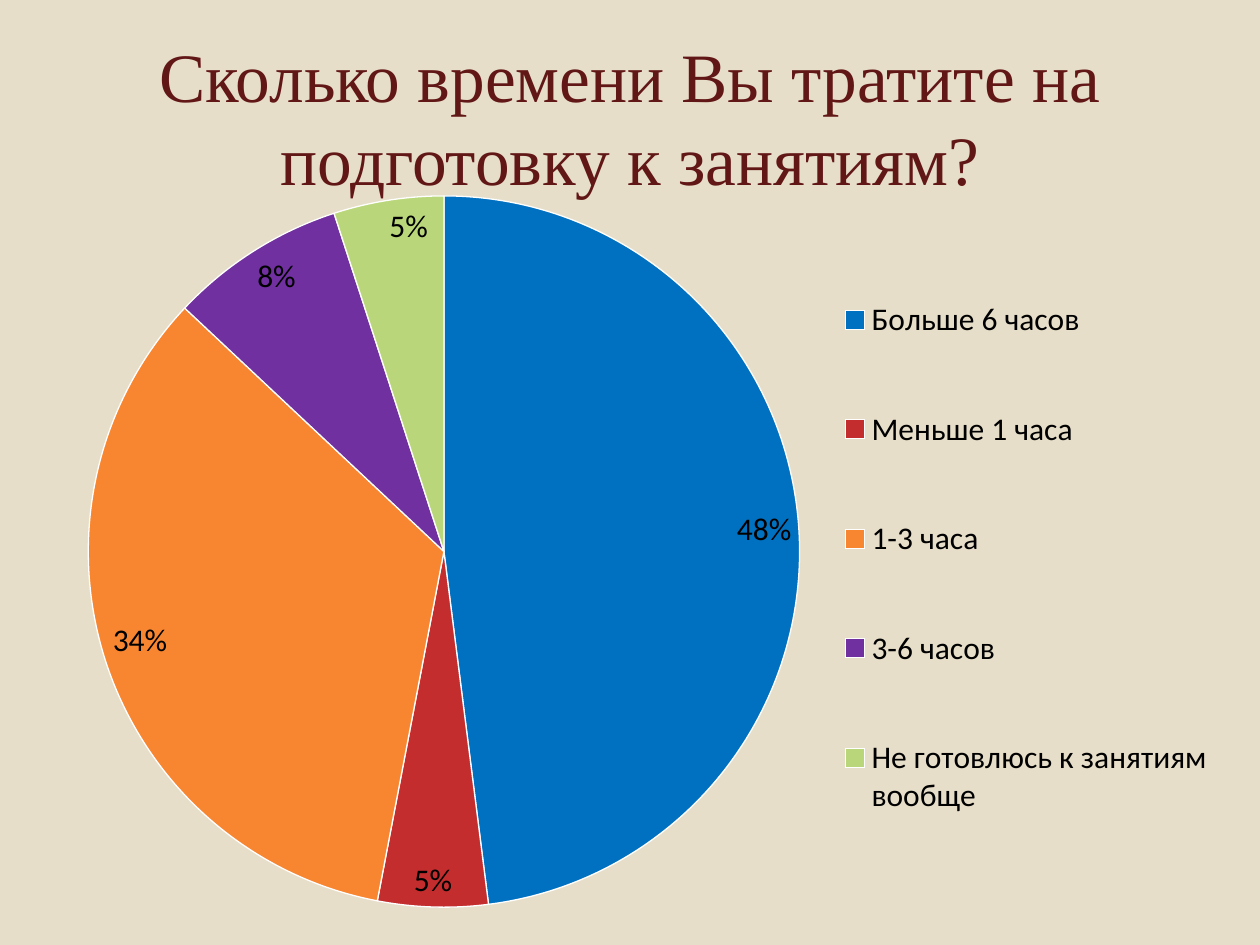
from lxml import etree
from pptx import Presentation
from pptx.chart.data import CategoryChartData
from pptx.dml.color import RGBColor
from pptx.enum import chart as ch, text
from pptx.util import Cm, Pt

WIDE, HIGH = 24, 15.93  # chart area in cm
SLICES = [
    ("Больше 6 часов", 48, "0070C0"),
    ("Меньше 1 часа", 5, "C32D2E"),
    ("1-3 часа", 34, "F88631"),
    ("3-6 часов", 8, "7030A0"),
    ("Не готовлюсь к занятиям вообще", 5, "B9D77A"),
]


def paint(fill, color):
    fill.solid()
    fill.fore_color.rgb = RGBColor.from_string(color)


def style(font, size, color, name):
    font.size, font.name = Pt(size), name
    font.color.rgb = RGBColor.from_string(color)


def write(slide, words, box, size=18, color="000000", name="Calibri"):
    """Add a centred text box."""
    frame = slide.shapes.add_textbox(*map(Cm, box)).text_frame
    frame.word_wrap = True
    frame.vertical_anchor = text.MSO_ANCHOR.MIDDLE
    para = frame.paragraphs[0]
    para.alignment = text.PP_ALIGN.CENTER
    run = para.add_run()
    run.text = words
    style(run.font, size, color, name)


def place(node, left, top, width, height, inner=False):
    """Fix a chart part at a spot given in cm within the chart area."""
    ns = node.nsmap["c"]
    for old in node.findall(f"{{{ns}}}layout"):
        node.remove(old)
    layout = etree.Element(f"{{{ns}}}layout")
    manual = etree.SubElement(layout, f"{{{ns}}}manualLayout")
    vals = [("layoutTarget", "inner")] if inner else []
    vals += [("xMode", "edge"), ("yMode", "edge"),
             ("x", left / WIDE), ("y", top / HIGH),
             ("w", width / WIDE), ("h", height / HIGH)]
    for tag, val in vals:
        etree.SubElement(manual, f"{{{ns}}}{tag}", val=str(val))
    if inner:
        node.insert(0, layout)
    else:
        node.find(f"{{{ns}}}legendPos").addnext(layout)


def add_pie(slide, left, top):
    data = CategoryChartData()
    data.categories = [label for label, _, _ in SLICES]
    data.add_series("Series 1", [share for _, share, _ in SLICES])
    box = map(Cm, (left, top, WIDE, HIGH))
    chart = slide.shapes.add_chart(ch.XL_CHART_TYPE.PIE, *box, data).chart
    chart.has_title = False
    style(chart.font, 18, "000000", "Calibri")

    plot = chart.plots[0]
    plot.vary_by_categories = True
    for i, (_, _, color) in enumerate(SLICES):
        form = plot.series[0].points[i].format
        paint(form.fill, color)
        paint(form.line.fill, "FFFFFF")
        form.line.width = Pt(0.75)

    plot.has_data_labels = True
    labels = plot.data_labels
    labels.show_value = False
    labels.show_percentage = True
    labels.number_format, labels.number_format_is_linked = "0%", False
    labels.position = ch.XL_LABEL_POSITION.INSIDE_END
    style(labels.font, 18, "000000", "Calibri")

    chart.has_legend = True
    key = chart.legend
    key.position = ch.XL_LEGEND_POSITION.RIGHT
    key.include_in_layout = False
    style(key.font, 18, "000000", "Calibri")
    area = plot._element.getparent()
    place(area, 0.86, 1.23, 14.4, 14.34, inner=True)
    place(key._element, 15.96, 1.9, 7.68, 13.25)


def main():
    deck = Presentation()
    deck.slide_width, deck.slide_height = Cm(25.4), Cm(19.05)
    slide = deck.slides.add_slide(deck.slide_layouts[6])
    paint(slide.background.fill, "E7DEC9")
    write(slide, "Сколько времени Вы тратите на подготовку к занятиям?",
          (1.27, 0.76, 22.86, 3.18), size=39.6, color="621717",
          name="Times New Roman")
    add_pie(slide, 0.89, 2.72)
    deck.save("out.pptx")


if __name__ == "__main__":
    main()
